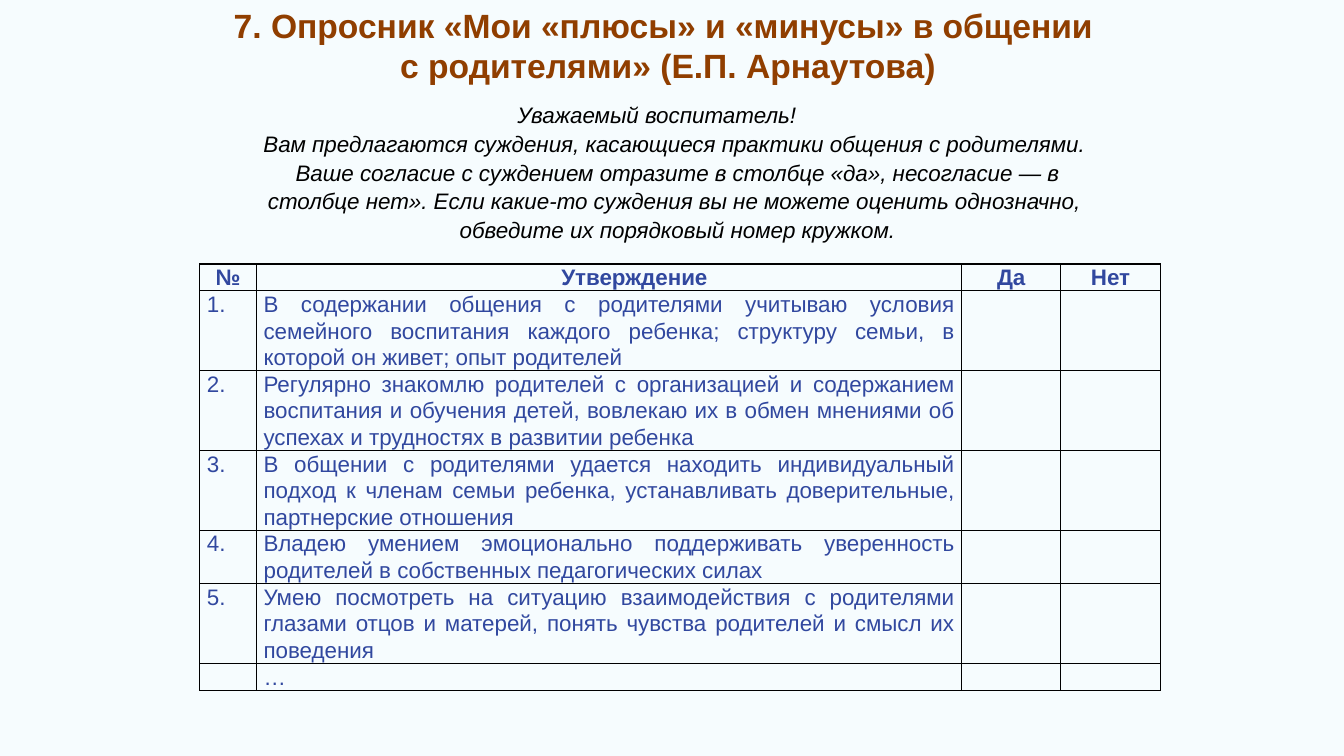
from dataclasses import dataclass

from lxml.etree import SubElement
from pptx import Presentation
from pptx.dml.color import RGBColor
from pptx.enum.text import MSO_ANCHOR as Anchor, MSO_AUTO_SIZE as AutoSize, PP_ALIGN as Align
from pptx.oxml.ns import qn
from pptx.util import Inches, Pt


@dataclass(frozen=True)
class Theme:
    font: str = "Arial"
    background: str = "F6FCFE"
    heading: str = "903E00"
    text: str = "000000"
    table: str = "31489F"
    border: str = "000000"
    heading_size: int = 24
    text_size: int = 16
    line_spacing: float = 1.07
    border_width: int = 1


HEADING = ["7. Опросник «Мои «плюсы» и «минусы» в общении ",
           "с родителями» (Е.П.\u00a0Арнаутова)"]
INSTRUCTIONS = [
    "Уважаемый воспитатель! ",
    "Вам предлагаются суждения, касающиеся практики общения с родителями. ",
    "Ваше согласие с суждением отразите в столбце «да», несогласие — в столбце нет». "
    "Если какие-то суждения вы не можете оценить однозначно, ",
    "обведите их порядковый номер кружком.",
]
COLUMNS = ["№", "Утверждение", "Да", "Нет"]
# Each statement with the number of lines it takes
STATEMENTS = [
    ("В содержании общения с родителями учитываю условия семейного воспитания каждого "
     "ребенка; структуру семьи, в которой он живет; опыт родителей", 3),
    ("Регулярно знакомлю родителей с организацией и содержанием воспитания и обучения "
     "детей, вовлекаю их в обмен мнениями об успехах и трудностях в развитии ребенка", 3),
    ("В общении с родителями удается находить индивидуальный подход к членам семьи "
     "ребенка, устанавливать доверительные, партнерские отношения", 3),
    ("Владею умением эмоционально поддерживать уверенность родителей в собственных "
     "педагогических силах", 2),
    ("Умею посмотреть на ситуацию взаимодействия с родителями глазами отцов и матерей, "
     "понять чувства родителей и смысл их поведения", 3),
]


class Questionnaire:
    """Builds one slide; lengths are percentages of the slide's size."""

    def __init__(self, deck, theme):
        self.deck, self.theme = deck, theme
        self.page = deck.slides.add_slide(deck.slide_layouts[1])
        fill = self.page.background.fill
        fill.solid()
        fill.fore_color.rgb = RGBColor.from_string(theme.background)

    def across(self, share):
        return round(self.deck.slide_width * share / 100)

    def down(self, share):
        return round(self.deck.slide_height * share / 100)

    def span(self, para, text, size, color, bold=False, italic=False):
        span = para.add_run()
        span.text = text
        font = span.font
        font.name, font.size = self.theme.font, Pt(size)
        font.bold, font.italic = bold, italic
        font.color.rgb = RGBColor.from_string(color)

    def place(self, box, left, top, width, height):
        box.left, box.top = self.across(left), self.down(top)
        box.width, box.height = self.across(width), self.down(height)
        frame = box.text_frame
        frame.word_wrap = True
        frame.auto_size = AutoSize.NONE
        frame.vertical_anchor = Anchor.TOP
        return frame

    def heading(self, lines, *place):
        frame = self.place(self.page.shapes.title, *place)
        for index, line in enumerate(lines):
            para = frame.add_paragraph() if index else frame.paragraphs[0]
            para.alignment = Align.CENTER
            self.span(para, line, self.theme.heading_size, self.theme.heading, bold=True)

    def instructions(self, lines, *place):
        para = self.place(self.page.placeholders[1], *place).paragraphs[0]
        para.alignment = Align.CENTER
        para.line_spacing = self.theme.line_spacing
        para.space_before, para.space_after = Pt(0), Pt(8)
        # Hanging indent without a bullet
        layout = para._p.get_or_add_pPr()
        layout.set("marL", str(Inches(0.35)))
        layout.set("indent", str(-Inches(0.35)))
        SubElement(layout, qn("a:buNone"))
        for index, line in enumerate(lines):
            if index:
                para.add_line_break()
            self.span(para, line, self.theme.text_size, self.theme.text, italic=True)

    def table(self, rows, lines, left, top, widths, line_height):
        shape = self.page.shapes.add_table(
            len(rows), len(widths), self.across(left), self.down(top),
            self.across(sum(widths)), self.down(sum(lines) * line_height))
        grid = shape.table
        grid.first_row = grid.horz_banding = False
        for column, width in zip(grid.columns, widths):
            column.width = self.across(width)
        for row, count in zip(grid.rows, lines):
            row.height = self.down(count * line_height)
        for y, texts in enumerate(rows):
            for x, text in enumerate(texts):
                self.cell(grid.cell(y, x), text, header=y == 0)
        # The statement heading is set in from the left
        grid.cell(0, 1).text_frame.paragraphs[0]._p.get_or_add_pPr().set("marL", str(Inches(0.5)))

    def cell(self, cell, text, header):
        cell.margin_left = cell.margin_right = Inches(0.07)
        cell.margin_top = cell.margin_bottom = 0
        para = cell.text_frame.paragraphs[0]
        para.alignment = Align.CENTER if header else Align.JUSTIFY
        para.line_spacing = self.theme.line_spacing
        if text:
            self.span(para, text, self.theme.text_size, self.theme.table, bold=header)
        else:
            SubElement(para._p, qn("a:endParaRPr"), sz=str(self.theme.text_size * 100))
        # Borders come before the fill in the cell properties
        properties = cell._tc.get_or_add_tcPr()
        for side in ("lnL", "lnR", "lnT", "lnB"):
            line = SubElement(properties, qn(f"a:{side}"), w=str(Pt(self.theme.border_width)))
            SubElement(SubElement(line, qn("a:solidFill")), qn("a:srgbClr"), val=self.theme.border)
        cell.fill.background()


def main():
    deck = Presentation()
    deck.slide_width, deck.slide_height = Inches(13.33), Inches(7.5)
    slide = Questionnaire(deck, Theme())

    # Heading and instructions
    slide.heading(HEADING, 14.25, 0, 70.9, 12.13)
    slide.instructions(INSTRUCTIONS, 15.42, 12.47, 67.37, 18.8)

    # Statements to be answered with yes or no
    answers = [[f"{number}.", text, "", ""]
               for number, (text, _) in enumerate(STATEMENTS, 1)]
    rows = [COLUMNS, *answers, ["", "…", "", ""]]
    lines = [1, *(count for _, count in STATEMENTS), 1]
    slide.table(rows, lines, 14.87, 34.93, [4.22, 52.48, 7.35, 7.43], 3.5)

    deck.save("out.pptx")


if __name__ == "__main__":
    main()
